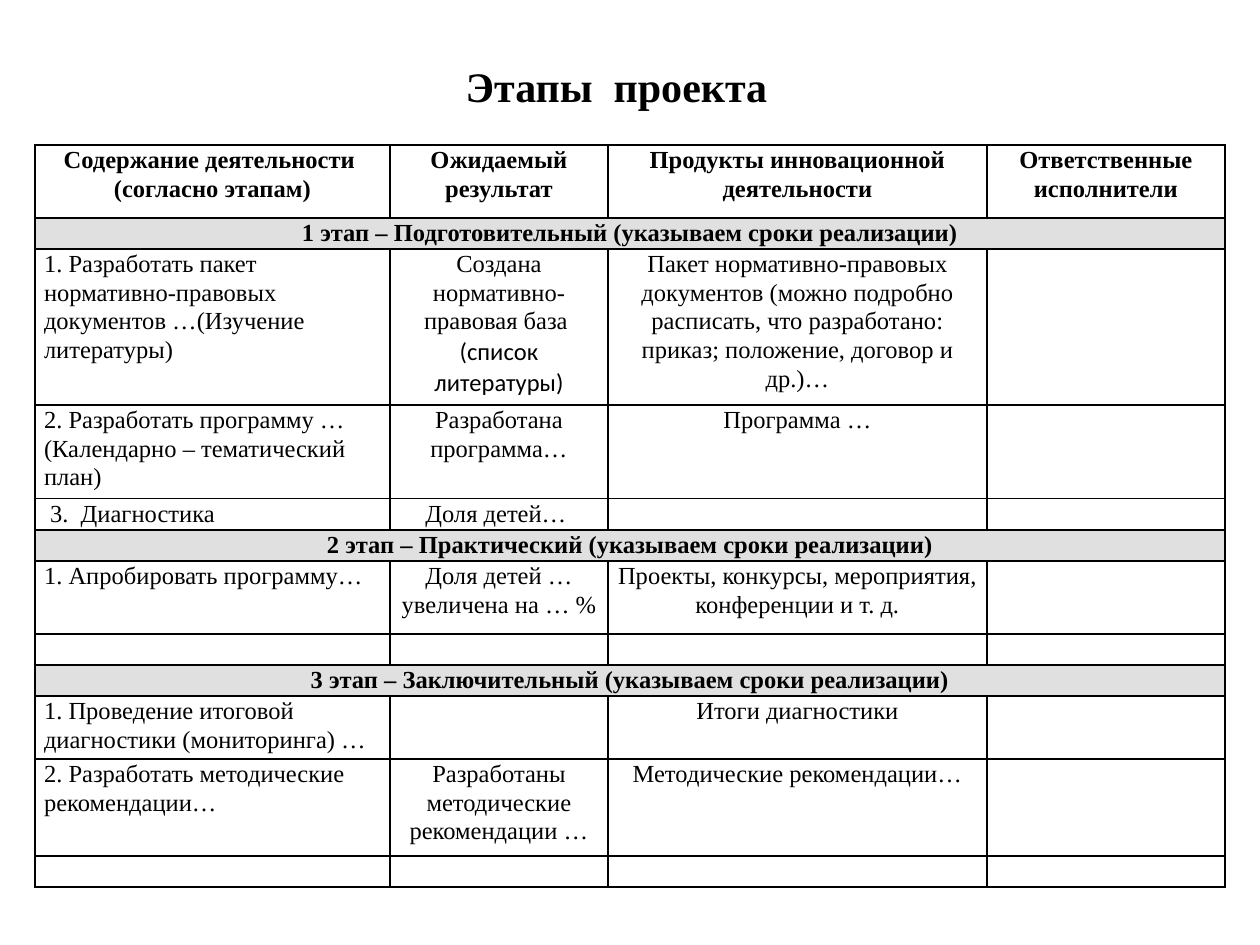
from lxml.etree import SubElement
from pptx import Presentation
from pptx.dml.color import RGBColor
from pptx.enum.text import MSO_ANCHOR, PP_ALIGN
from pptx.oxml.ns import qn
from pptx.util import Emu, Pt

PX_PER_INCH = 126
SERIF = "Times New Roman"
BLACK = "000000"
STAGE_GREY = "E0E0E0"
BODY_SIZE = 14

COLUMN_WIDTHS = [355, 218, 379, 238]
# Each row: height and its cell texts; a single text is a stage heading
ROWS = [
    (73, ["Содержание деятельности \n(согласно этапам)", "Ожидаемый результат",
          "Продукты инновационной деятельности", "Ответственные исполнители"]),
    (31, ["1 этап – Подготовительный (указываем сроки реализации)"]),
    (156, ["1. Разработать пакет нормативно-правовых документов …(Изучение литературы)",
           "Создана нормативно-правовая база \n(список литературы)",
           "Пакет нормативно-правовых документов (можно подробно расписать, "
           "что разработано: приказ; положение, договор и др.)…", ""]),
    (93, ["2. Разработать программу …(Календарно – тематический план)",
          "Разработана программа…", "Программа …", ""]),
    (31, [" 3.  Диагностика", "Доля детей… ", "", ""]),
    (31, ["2 этап – Практический (указываем сроки реализации)"]),
    (73, ["1. Апробировать программу…", "Доля детей … увеличена на … %",
          "Проекты, конкурсы, мероприятия, конференции и т. д.", ""]),
    (31, ["", "", "", ""]),
    (31, ["3 этап – Заключительный (указываем сроки реализации)"]),
    (63, ["1. Проведение итоговой диагностики (мониторинга) …", "",
          "Итоги диагностики", ""]),
    (97, ["2. Разработать методические рекомендации…",
          "Разработаны методические рекомендации …", "Методические рекомендации…", ""]),
    (31, ["", "", "", ""]),
]


def px(length):
    return Emu(round(length * 914400 / PX_PER_INCH))


def color(hex_string):
    return RGBColor.from_string(hex_string)


def format_runs(paragraph, size, bold, font_name=SERIF):
    for run in paragraph.runs:
        run.font.name = font_name
        run.font.size = Pt(size)
        run.font.bold = bold
        run.font.color.rgb = color(BLACK)


def add_title(slide, text):
    title = slide.shapes.add_textbox(px(21), px(54), px(1191), px(63))
    title.text_frame.word_wrap = True
    title.text_frame.text = text
    heading = title.text_frame.paragraphs[0]
    heading.alignment = PP_ALIGN.CENTER
    format_runs(heading, 24, True)


def add_borders(cell):
    properties = cell._tc.get_or_add_tcPr()
    for side in ("a:lnL", "a:lnR", "a:lnT", "a:lnB"):
        line = SubElement(properties, qn(side), w=str(Pt(1)))
        fill = SubElement(line, qn("a:solidFill"))
        SubElement(fill, qn("a:srgbClr"), val=BLACK)


def style_cell(cell, fill=None):
    cell.margin_left = cell.margin_right = px(9)
    cell.margin_top = cell.margin_bottom = 0
    cell.vertical_anchor = MSO_ANCHOR.TOP
    add_borders(cell)
    if fill:
        cell.fill.solid()
        cell.fill.fore_color.rgb = color(fill)
    else:
        cell.fill.background()


def write_cell(cell, text, alignment, bold):
    cell.text_frame.text = text
    for paragraph in cell.text_frame.paragraphs:
        paragraph.alignment = alignment
        paragraph.line_spacing = 1.06
        # The remark about literature is set in the sans font
        is_remark = paragraph.text == "(список литературы)"
        format_runs(paragraph, BODY_SIZE, bold, "Calibri" if is_remark else SERIF)
        if not text:
            # Keeps an empty row as low as one line of body text
            SubElement(paragraph._p, qn("a:endParaRPr"), sz=str(BODY_SIZE * 100))


def add_stage_table(slide):
    height = sum(row_height for row_height, _ in ROWS)
    frame = slide.shapes.add_table(len(ROWS), len(COLUMN_WIDTHS), px(35), px(145),
                                   px(sum(COLUMN_WIDTHS)), px(height))
    table = frame.table
    table.first_row = table.horz_banding = False
    for column, width in zip(table.columns, COLUMN_WIDTHS):
        column.width = px(width)

    for row_index, (row_height, texts) in enumerate(ROWS):
        row = table.rows[row_index]
        row.height = px(row_height)
        is_header = row_index == 0
        is_stage = len(texts) == 1
        for cell in row.cells:
            style_cell(cell, STAGE_GREY if is_stage else None)
        if is_stage:
            row.cells[0].merge(row.cells[len(COLUMN_WIDTHS) - 1])
        for column_index, text in enumerate(texts):
            is_activity = column_index == 0 and not (is_header or is_stage)
            alignment = PP_ALIGN.LEFT if is_activity else PP_ALIGN.CENTER
            write_cell(row.cells[column_index], text, alignment, is_header or is_stage)


def main():
    presentation = Presentation()
    presentation.slide_width = px(1260)
    presentation.slide_height = px(945)
    slide = presentation.slides.add_slide(presentation.slide_layouts[6])
    add_title(slide, "Этапы  проекта")
    add_stage_table(slide)
    presentation.save("out.pptx")


if __name__ == "__main__":
    main()
